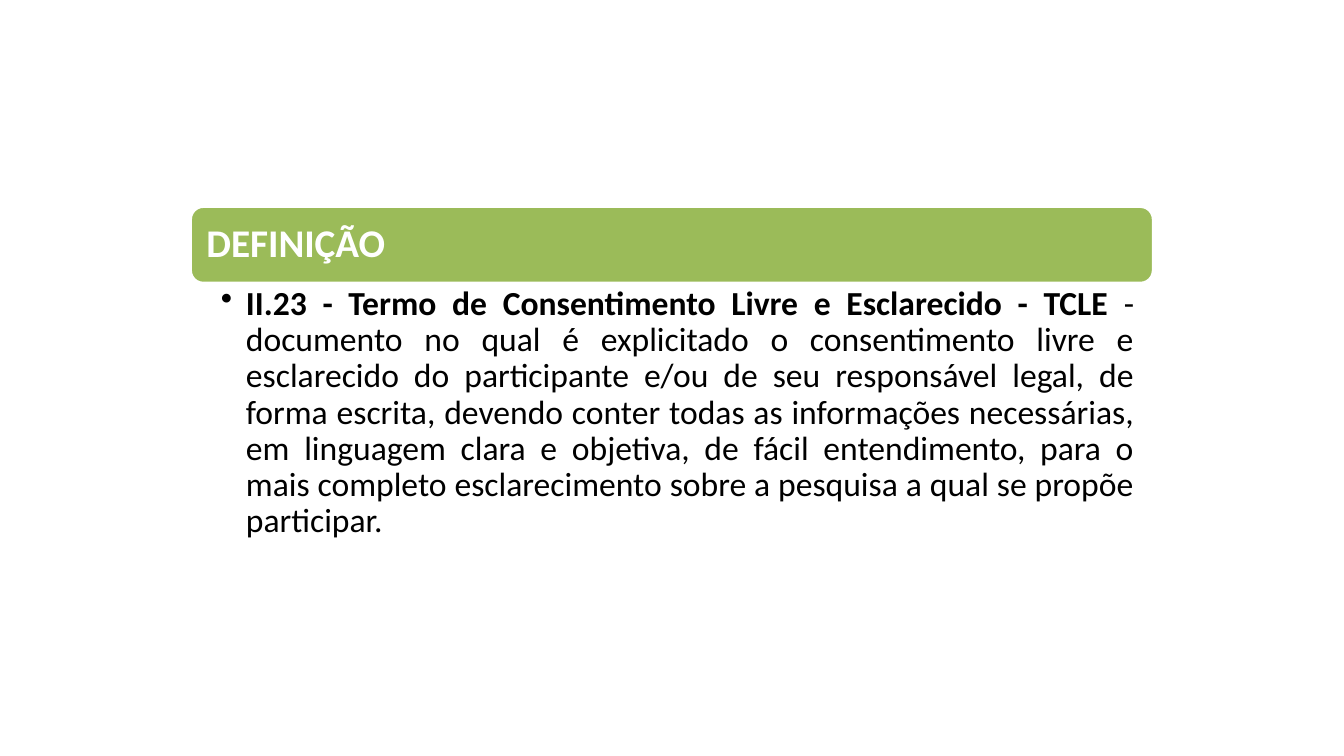
from dataclasses import dataclass
from typing import Any

from lxml.etree import SubElement
from pptx import Presentation
from pptx.dml.color import RGBColor as RGB
from pptx.enum.shapes import MSO_SHAPE as SHAPE
from pptx.enum.text import MSO_ANCHOR as ANCHOR, PP_ALIGN as ALIGN
from pptx.oxml.ns import qn
from pptx.util import Inches, Pt

COLORS = {"green": "9BBB59", "white": "FFFFFF", "black": "000000"}
SLIDE_W, SLIDE_H = Inches(13.333), Inches(7.5)


@dataclass
class Panel:
    left: float
    top: float
    width: float
    height: float
    runs: list[tuple[str, bool]]
    size: int
    color: str
    frame: dict[str, Any]
    para: dict[str, Any]
    filled: bool = False
    bullet: bool = False


PANELS = [
    Panel(14.18, 27.33, 71.63, 10.13, [("DEFINIÇÃO", True)], 28, "white",
          {"vertical_anchor": ANCHOR.MIDDLE,
           "margin_left": Inches(0.12), "margin_right": Inches(0.12),
           "margin_top": Inches(0.12), "margin_bottom": Inches(0.12)},
          {"alignment": ALIGN.LEFT}, filled=True),
    Panel(14.18, 37.47, 71.63, 35.33,
          [("II.23 - Termo de Consentimento Livre e Esclarecido - TCLE ", True),
           ("- documento no qual é explicitado o consentimento livre e "
            "esclarecido do participante e/ou de seu responsável legal, de "
            "forma escrita, devendo conter todas as informações necessárias, "
            "em linguagem clara e objetiva, de fácil entendimento, para o "
            "mais completo esclarecimento sobre a pesquisa a qual se propõe "
            "participar.", False)], 24, "black",
          {"vertical_anchor": ANCHOR.TOP,
           "margin_left": Inches(0.3), "margin_right": Inches(0.19),
           "margin_top": Inches(0.03), "margin_bottom": Inches(0.03)},
          {"alignment": ALIGN.JUSTIFY, "level": 1}, bullet=True),
]


def apply(target: Any, values: dict[str, Any]) -> None:
    for name, value in values.items():
        setattr(target, name, value)


def add_bullet(p: Any) -> None:
    ppr = p._p.get_or_add_pPr()
    ppr.set("marL", str(Inches(0.25)))
    ppr.set("indent", str(-Inches(0.25)))
    SubElement(ppr, qn("a:buChar")).set("char", "•")


def draw_panel(shapes: Any, panel: Panel) -> None:
    box = (int(SLIDE_W * panel.left / 100), int(SLIDE_H * panel.top / 100),
           int(SLIDE_W * panel.width / 100), int(SLIDE_H * panel.height / 100))
    if panel.filled:
        sp = shapes.add_shape(SHAPE.ROUNDED_RECTANGLE, *box)
        sp.shadow.inherit = False
        sp.fill.solid()
        sp.fill.fore_color.rgb = RGB.from_string(COLORS["green"])
        sp.line.color.rgb = RGB.from_string(COLORS["white"])
        sp.line.width = Pt(2)
    else:
        sp = shapes.add_textbox(*box)
    tf = sp.text_frame
    apply(tf, {"word_wrap": True, **panel.frame})
    p = tf.paragraphs[0]
    if panel.bullet:
        add_bullet(p)
    apply(p, {"line_spacing": 0.9, **panel.para})
    for text, bold in panel.runs:
        r = p.add_run()
        r.text = text
        apply(r.font, {"name": "Calibri", "size": Pt(panel.size), "bold": bold})
        r.font.color.rgb = RGB.from_string(COLORS[panel.color])


def main() -> None:
    prs = Presentation()
    apply(prs, {"slide_width": SLIDE_W, "slide_height": SLIDE_H})
    s = prs.slides.add_slide(prs.slide_layouts[6])
    for panel in PANELS:
        draw_panel(s.shapes, panel)
    prs.save("out.pptx")


if __name__ == "__main__":
    main()
